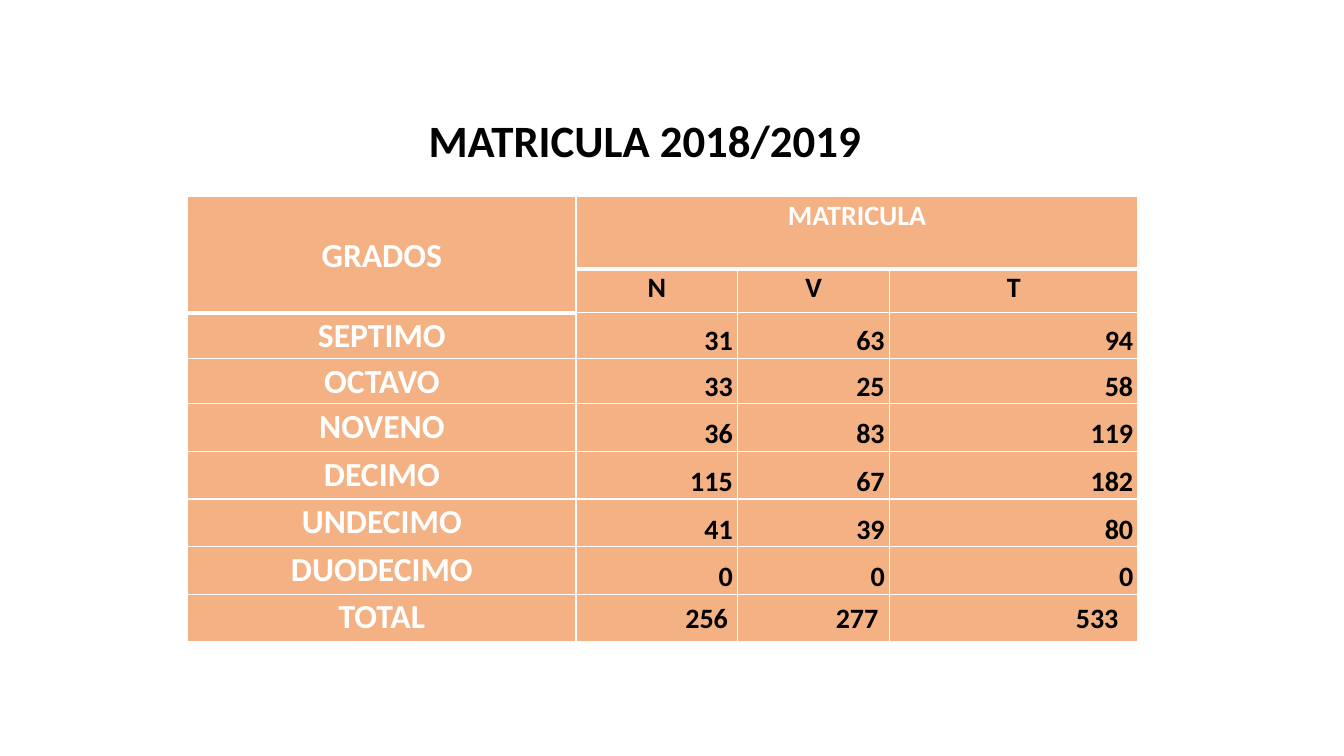
from lxml.etree import SubElement
from pptx import Presentation
from pptx.dml.color import RGBColor as Rgb
from pptx.enum.text import MSO_ANCHOR as Anchor, PP_ALIGN as Align
from pptx.oxml.ns import qn
from pptx.util import Pt

FONT = "Calibri"
COLOR = {"fill": "F4B183", "white": "FFFFFF", "black": "000000"}
WIDTHS = [277.5, 115.5, 108.5, 177.5]
HEIGHTS = [51.5, 31.5, 32.5, 32.5] + [34] * 5
GRADES = [
    ("SEPTIMO", 31, 63, 94),
    ("OCTAVO", 33, 25, 58),
    ("NOVENO", 36, 83, 119),
    ("DECIMO", 115, 67, 182),
    ("UNDECIMO", 41, 39, 80),
    ("DUODECIMO", 0, 0, 0),
]
TOTAL = ("TOTAL", 256, 277, 533)
INDENTS = [7, 8, 14]


def write(frame, text, size, color, align=Align.LEFT, space=1.0):
    para = frame.paragraphs[0]
    para.alignment = align
    para.line_spacing = space
    run = para.add_run()
    run.text = str(text)
    font = run.font
    font.name, font.size, font.bold = FONT, Pt(size), True
    font.color.rgb = Rgb.from_string(COLOR[color])


def weight(row, col):
    """Width of the rule below a cell: thick under the headings."""
    return 3 if row == (1 if col == 0 else 0) else 1


def frame_cell(cell, row, col):
    """Give a cell its white borders and its fill."""
    props = cell._tc.get_or_add_tcPr()
    edges = {"lnL": 1, "lnR": 1, "lnT": weight(row - 1, col), "lnB": weight(row, col)}
    for tag, width in edges.items():
        line = SubElement(props, qn("a:" + tag), w=str(Pt(width)))
        fill = SubElement(line, qn("a:solidFill"))
        SubElement(fill, qn("a:srgbClr"), val=COLOR["white"])
    cell.fill.solid()
    cell.fill.fore_color.rgb = Rgb.from_string(COLOR["fill"])


def put(cell, text, size, color, align=Align.CENTER, anchor=Anchor.TOP,
        space=1.07, side=5, right=None):
    cell.margin_left = Pt(side)
    cell.margin_right = Pt(side if right is None else right)
    cell.vertical_anchor = anchor
    write(cell.text_frame, text, size, color, align, space)


def add_title(slide, left, top, width, height):
    box = slide.shapes.add_textbox(Pt(left), Pt(top), Pt(width), Pt(height))
    box.text_frame.word_wrap = True
    write(box.text_frame, "MATRICULA 2018/2019", 32, "black")


def add_grid(slide, left, top):
    table = slide.shapes.add_table(
        len(HEIGHTS), len(WIDTHS), Pt(left), Pt(top),
        Pt(sum(WIDTHS)), Pt(sum(HEIGHTS))).table
    table.first_row = table.horz_banding = False
    for col, width in enumerate(WIDTHS):
        table.columns[col].width = Pt(width)
    for row, height in enumerate(HEIGHTS):
        table.rows[row].height = Pt(height)
        for col in range(len(WIDTHS)):
            cell = table.cell(row, col)
            cell.margin_top = cell.margin_bottom = 0
            frame_cell(cell, row, col)

    table.cell(0, 0).merge(table.cell(1, 0))
    table.cell(0, 1).merge(table.cell(0, 3))
    put(table.cell(0, 0), "GRADOS", 24, "white", anchor=Anchor.MIDDLE)
    put(table.cell(0, 1), "MATRICULA", 20, "white")
    for col, head in enumerate("NVT", 1):
        put(table.cell(1, col), head, 20, "black")

    for row, (grade, *counts) in enumerate(GRADES, 2):
        put(table.cell(row, 0), grade, 24, "white")
        for col, count in enumerate(counts, 1):
            put(table.cell(row, col), count, 20, "black", Align.RIGHT,
                Anchor.BOTTOM, 1.15, 3.5)

    last = len(HEIGHTS) - 1
    put(table.cell(last, 0), TOTAL[0], 24, "white")
    for col, (count, indent) in enumerate(zip(TOTAL[1:], INDENTS), 1):
        put(table.cell(last, col), count, 20, "black", Align.RIGHT,
            Anchor.MIDDLE, right=indent)


def main():
    deck = Presentation()
    deck.slide_width, deck.slide_height = Pt(960), Pt(540)
    slide = deck.slides.add_slide(deck.slide_layouts[6])
    add_grid(slide, 134, 140.5)
    add_title(slide, 299, 77, 364, 46)
    deck.save("out.pptx")


if __name__ == "__main__":
    main()
